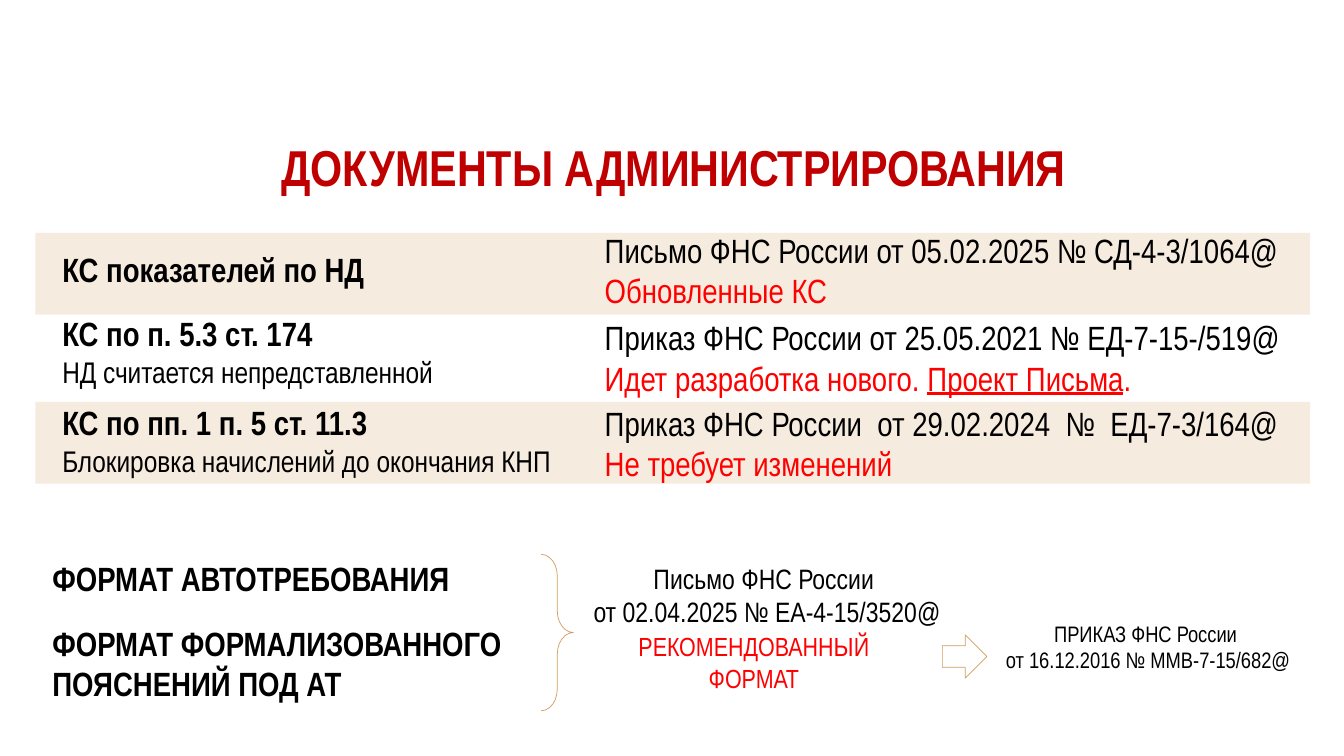
import pptx
import pptx.dml.color
import pptx.enum.shapes
import pptx.enum.text
import pptx.util
from pptx.util import Cm

FONT = "Arial Narrow"
TITLE_RED = pptx.dml.color.RGBColor(0xC0, 0x00, 0x00)
RED = pptx.dml.color.RGBColor(0xFF, 0x00, 0x00)
BLACK = pptx.dml.color.RGBColor(0x00, 0x00, 0x00)
BEIGE = pptx.dml.color.RGBColor(0xF6, 0xEB, 0xDF)
OCHRE = pptx.dml.color.RGBColor(0xD1, 0x9D, 0x5F)

SHAPE = pptx.enum.shapes.MSO_SHAPE
LEFT = pptx.enum.text.PP_ALIGN.LEFT
CENTER = pptx.enum.text.PP_ALIGN.CENTER

LABEL_LEFT, DOCUMENT_LEFT, FORMAT_LEFT = 1.32, 14.99, 1.07


def format_run(r, size, color=BLACK, bold=False, underline=None):
    """Apply the slide's font with the given size, colour and emphasis."""
    r.font.name = FONT
    r.font.size = pptx.util.Pt(size)
    r.font.color.rgb = color
    r.font.bold = bold
    r.font.underline = underline


def add_title(s, text):
    """Fill and place the title placeholder."""
    sp = s.shapes.title
    sp.left, sp.top, sp.width, sp.height = Cm(1.96), Cm(3.48), Cm(30.05), Cm(2.03)
    tf = sp.text_frame
    tf.text = text
    tf.auto_size = pptx.enum.text.MSO_AUTO_SIZE.NONE
    tf.vertical_anchor = pptx.enum.text.MSO_ANCHOR.TOP
    p = tf.paragraphs[0]
    p.alignment = CENTER
    p.line_spacing = 0.9
    format_run(p.runs[0], 36, TITLE_RED, bold=True)


def add_text(s, left, top, width, height, lines, align=LEFT):
    """Add a text box; each line is a list of (text, style) runs."""
    sp = s.shapes.add_textbox(Cm(left), Cm(top), Cm(width), Cm(height))
    tf = sp.text_frame
    tf.word_wrap = True
    for i, line in enumerate(lines):
        p = tf.add_paragraph() if i else tf.paragraphs[0]
        p.alignment = align
        for text, style in line:
            r = p.add_run()
            r.text = text
            format_run(r, **style)


def add_shape(s, kind, left, top, width, height, fill=None, line=None):
    """Add a preset shape with an optional fill and thin outline."""
    sp = s.shapes.add_shape(kind, Cm(left), Cm(top), Cm(width), Cm(height))
    sp.shadow.inherit = False
    if fill is None:
        sp.fill.background()
    else:
        sp.fill.solid()
        sp.fill.fore_color.rgb = fill
    if line is None:
        sp.line.fill.background()
    else:
        sp.line.color.rgb = line
        sp.line.width = pptx.util.Pt(0.5)
    return sp


def add_documents(s):
    """Add the three striped rows of control ratios and their documents."""
    heading = {"size": 24, "bold": True}
    note = {"size": 21.3}
    document = {"size": 24}
    status = {"size": 24, "color": RED}
    link = {"size": 24, "color": RED, "underline": True}

    for top in (5.87, 10.13):
        add_shape(s, SHAPE.RECTANGLE, 0.89, top, 32.13, 2.06, fill=BEIGE)

    labels = [
        (6.15, 9.12, 1.27, [[("КС показателей по НД", heading)]]),
        (7.77, 11.33, 2.18, [[("КС по п. 5.3 ст. 174", heading)],
                             [("НД считается непредставленной", note)]]),
        (10.01, 13.82, 2.18, [[("КС по пп. 1 п. 5 ст. 11.3", heading)],
                              [("Блокировка начислений до окончания КНП", note)]]),
    ]
    for top, width, height, lines in labels:
        add_text(s, LABEL_LEFT, top, width, height, lines)

    documents = [
        (5.66, 18.47, "Письмо ФНС России от 05.02.2025 № СД-4-3/1064@",
         [("Обновленные КС", status)]),
        (7.87, 18.01, "Приказ ФНС России от 25.05.2021 № ЕД-7-15-/519@",
         [("Идет разработка нового. ", status), ("Проект Письма", link), (".", status)]),
        (10.03, 18.39, "Приказ ФНС России  от 29.02.2024  №  ЕД-7-3/164@",
         [("Не требует изменений", status)]),
    ]
    for top, width, name, state in documents:
        add_text(s, DOCUMENT_LEFT, top, width, 2.31, [[(name, document)], state])


def add_formats(s):
    """Add the formats, their brace, and the letter leading to the order."""
    heading = {"size": 24, "bold": True}
    letter = {"size": 20}
    order = {"size": 16}

    add_text(s, FORMAT_LEFT, 13.94, 12.37, 1.27, [[("ФОРМАТ АВТОТРЕБОВАНИЯ", heading)]])
    add_text(s, FORMAT_LEFT, 15.57, 12.37, 2.31,
             [[("ФОРМАТ ФОРМАЛИЗОВАННОГО ПОЯСНЕНИЙ ПОД АТ", heading)]])
    add_text(s, 14.25, 14.02, 10.16, 1.96,
             [[("Письмо ФНС России ", letter)],
              [("от 02.04.2025 № ЕА-4-15/3520@", letter)]], CENTER)
    add_text(s, 15.47, 15.77, 7.06, 1.85,
             [[("РЕКОМЕНДОВАННЫЙ ФОРМАТ", {"size": 18.7, "color": RED})]], CENTER)
    brace = add_shape(s, SHAPE.RIGHT_BRACE, 13.64, 13.97, 0.81, 3.94, line=OCHRE)
    brace.adjustments[0] = 0.67
    add_shape(s, SHAPE.RIGHT_ARROW, 23.75, 16, 1.12, 1.09, line=OCHRE)
    add_text(s, 24.87, 15.49, 8.13, 1.63,
             [[("ПРИКАЗ ФНС России ", order)],
              [("от 16.12.2016 № ММВ-7-15/682@", order)]], CENTER)


def main():
    """Build the slide and save it."""
    prs = pptx.Presentation()
    prs.slide_width, prs.slide_height = Cm(33.87), Cm(19.05)
    s = prs.slides.add_slide(prs.slide_layouts[5])
    add_title(s, "ДОКУМЕНТЫ АДМИНИСТРИРОВАНИЯ")
    add_documents(s)
    add_formats(s)
    prs.save("out.pptx")


if __name__ == "__main__":
    main()
